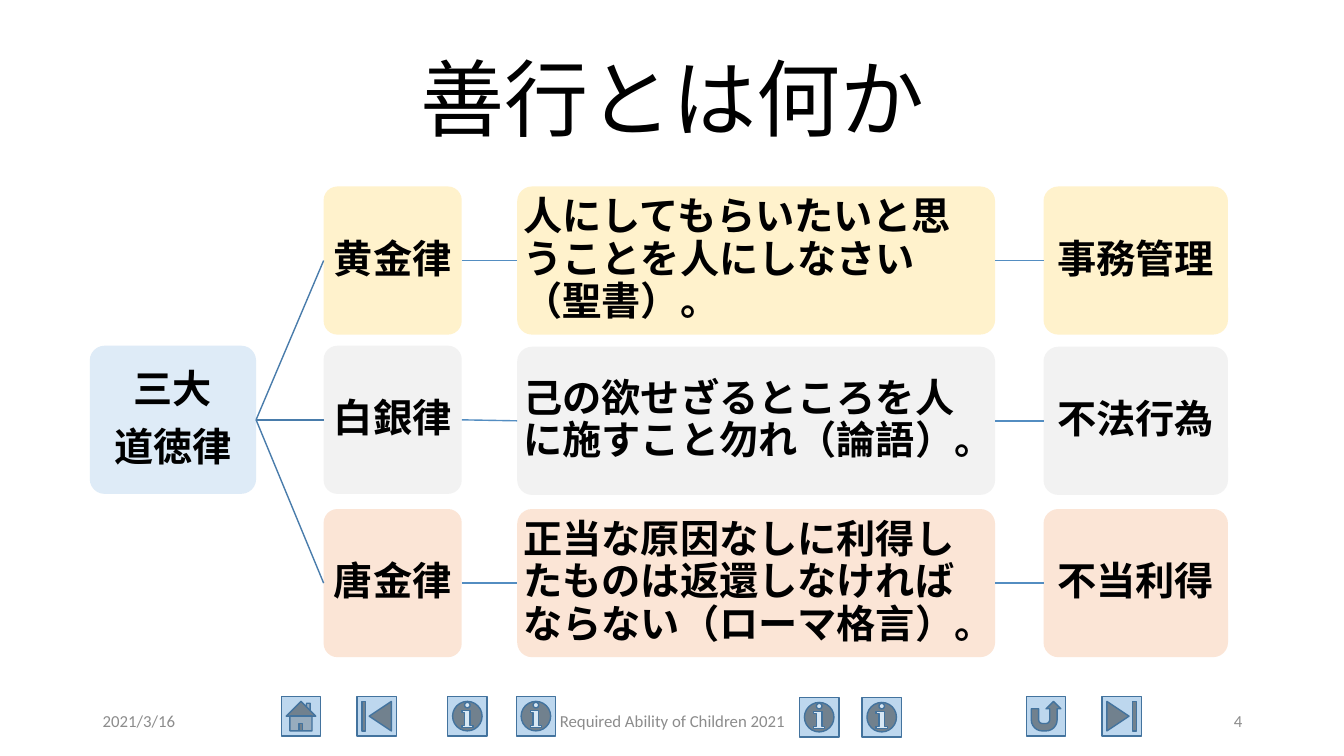
from lxml.etree import SubElement
from pptx import Presentation
from pptx.dml.color import RGBColor
from pptx.enum.shapes import MSO_CONNECTOR, MSO_SHAPE
from pptx.enum.text import MSO_ANCHOR, PP_ALIGN
from pptx.oxml.ns import qn
from pptx.util import Inches, Pt

BLACK = RGBColor(0x00, 0x00, 0x00)
GREY = RGBColor(0x8C, 0x8C, 0x8C)
PALE_BLUE = RGBColor(0xDE, 0xEB, 0xF7)
GOLD = RGBColor(0xFF, 0xF2, 0xCC)
SILVER = RGBColor(0xF2, 0xF2, 0xF2)
BRONZE = RGBColor(0xFB, 0xE5, 0xD6)
BUTTON_FILL = RGBColor(0xBD, 0xD7, 0xEE)
BUTTON_LINE = RGBColor(0x43, 0x73, 0x9E)
BRANCH_LINE = RGBColor(0x49, 0x7C, 0xAB)
CHAIN_LINE = RGBColor(0x53, 0x8D, 0xC1)

TITLE = "善行とは何か"
ROOT = ("三大", "道徳律")
LAWS = [
    (GOLD, (1.85, 1.85, 1.85),
     ("黄金律", "人にしてもらいたいと思うことを人にしなさい（聖書）。", "事務管理")),
    (SILVER, (3.43, 3.44, 3.44),
     ("白銀律", "己の欲せざるところを人に施すこと勿れ（論語）。", "不法行為")),
    (BRONZE, (5.05, 5.05, 5.05),
     ("唐金律", "正当な原因なしに利得したものは返還しなければならない（ローマ格言）。", "不当利得")),
]
COLUMNS = [(3.21, 1.37, PP_ALIGN.CENTER), (5.13, 4.74, PP_ALIGN.LEFT),
           (10.35, 1.83, PP_ALIGN.CENTER)]
BUTTONS = [
    (MSO_SHAPE.ACTION_BUTTON_HOME, 2.79, 6.91),
    (MSO_SHAPE.ACTION_BUTTON_BEGINNING, 3.54, 6.91),
    (MSO_SHAPE.ACTION_BUTTON_RETURN, 10.18, 6.91),
    (MSO_SHAPE.ACTION_BUTTON_END, 10.93, 6.91),
    (MSO_SHAPE.ACTION_BUTTON_INFORMATION, 4.44, 6.91),
    (MSO_SHAPE.ACTION_BUTTON_INFORMATION, 5.12, 6.91),
    (MSO_SHAPE.ACTION_BUTTON_INFORMATION, 7.93, 6.92),
    (MSO_SHAPE.ACTION_BUTTON_INFORMATION, 8.55, 6.92),
]
FOOTERS = [
    ("2021/3/16", 0.92, 3, PP_ALIGN.LEFT),
    ("Required Ability of Children 2021", 4.42, 4.5, PP_ALIGN.CENTER),
    ("4", 9.42, 3, PP_ALIGN.RIGHT),
]
BOX_HEIGHT = 1.47
BUTTON_SIZE = 0.39
BOX_FRAME = {"word_wrap": True, "vertical_anchor": MSO_ANCHOR.MIDDLE,
             **{f"margin_{side}": Inches(0.02) for side in ("left", "top", "right", "bottom")}}
PLAIN_FRAME = {"word_wrap": True, "vertical_anchor": MSO_ANCHOR.MIDDLE}
BOX_FONT = {"name": "Times New Roman", "size": Pt(28), "bold": True}
TITLE_FONT = {"name": "Calibri", "size": Pt(60)}
FOOTER_FONT = {"name": "Calibri", "size": Pt(12)}
BOX_PARAGRAPH = {"line_spacing": 0.9, "space_after": Pt(11)}


def apply(target, values):
    """Set each format value on the target."""
    for name, value in values.items():
        setattr(target, name, value)


def write(shape, lines, frame_format, paragraph_format, font_format, color):
    """Write formatted paragraphs into a shape."""
    frame = shape.text_frame
    apply(frame, frame_format)
    frame.text = "\n".join(lines)
    for paragraph in frame.paragraphs:
        apply(paragraph, paragraph_format)
        for run in paragraph.runs:
            apply(run.font, font_format)
            run.font.color.rgb = color


def add_box(slide, lines, left, top, width, fill, alignment):
    """Add one rounded box of the tree."""
    box = slide.shapes.add_shape(MSO_SHAPE.ROUNDED_RECTANGLE, Inches(left), Inches(top),
                                 Inches(width), Inches(BOX_HEIGHT))
    box.adjustments[0] = 0.1
    box.shadow.inherit = False
    box.fill.solid()
    box.fill.fore_color.rgb = fill
    box.line.fill.background()
    write(box, lines, BOX_FRAME, {**BOX_PARAGRAPH, "alignment": alignment}, BOX_FONT, BLACK)
    return box


def join(slide, parent, child, color):
    """Join the right side of a box to the left side of the next."""
    link = slide.shapes.add_connector(MSO_CONNECTOR.STRAIGHT, 0, 0, 0, 0)
    link.begin_connect(parent, 3)
    link.end_connect(child, 1)
    link.line.color.rgb = color
    link.line.width = Pt(1)
    SubElement(link._element.spPr, qn("a:effectLst"))


def main():
    """Build the slide and save it."""
    deck = Presentation()
    apply(deck, {"slide_width": Inches(13.33), "slide_height": Inches(7.5)})
    slide = deck.slides.add_slide(deck.slide_layouts[5])

    title = slide.shapes.title
    apply(title, {"left": Inches(0.92), "top": Inches(0.4),
                  "width": Inches(11.5), "height": Inches(1.25)})
    write(title, [TITLE], PLAIN_FRAME, {"alignment": PP_ALIGN.CENTER, "line_spacing": 0.9},
          TITLE_FONT, BLACK)

    for preset, left, top in BUTTONS:
        button = slide.shapes.add_shape(preset, Inches(left), Inches(top),
                                        Inches(BUTTON_SIZE), Inches(BUTTON_SIZE))
        button.shadow.inherit = False
        button.fill.solid()
        button.fill.fore_color.rgb = BUTTON_FILL
        button.line.color.rgb = BUTTON_LINE
        button.line.width = Pt(1)

    for wording, left, width, alignment in FOOTERS:
        footer = slide.shapes.add_textbox(Inches(left), Inches(6.95), Inches(width), Inches(0.4))
        write(footer, [wording], PLAIN_FRAME, {"alignment": alignment}, FOOTER_FONT, GREY)

    root = add_box(slide, ROOT, 0.89, 3.43, 1.65, PALE_BLUE, PP_ALIGN.CENTER)
    for fill, tops, wordings in LAWS:
        parent, color = root, BRANCH_LINE
        for (left, width, alignment), top, wording in zip(COLUMNS, tops, wordings):
            box = add_box(slide, [wording], left, top, width, fill, alignment)
            join(slide, parent, box, color)
            parent, color = box, CHAIN_LINE

    deck.save("out.pptx")


if __name__ == "__main__":
    main()
